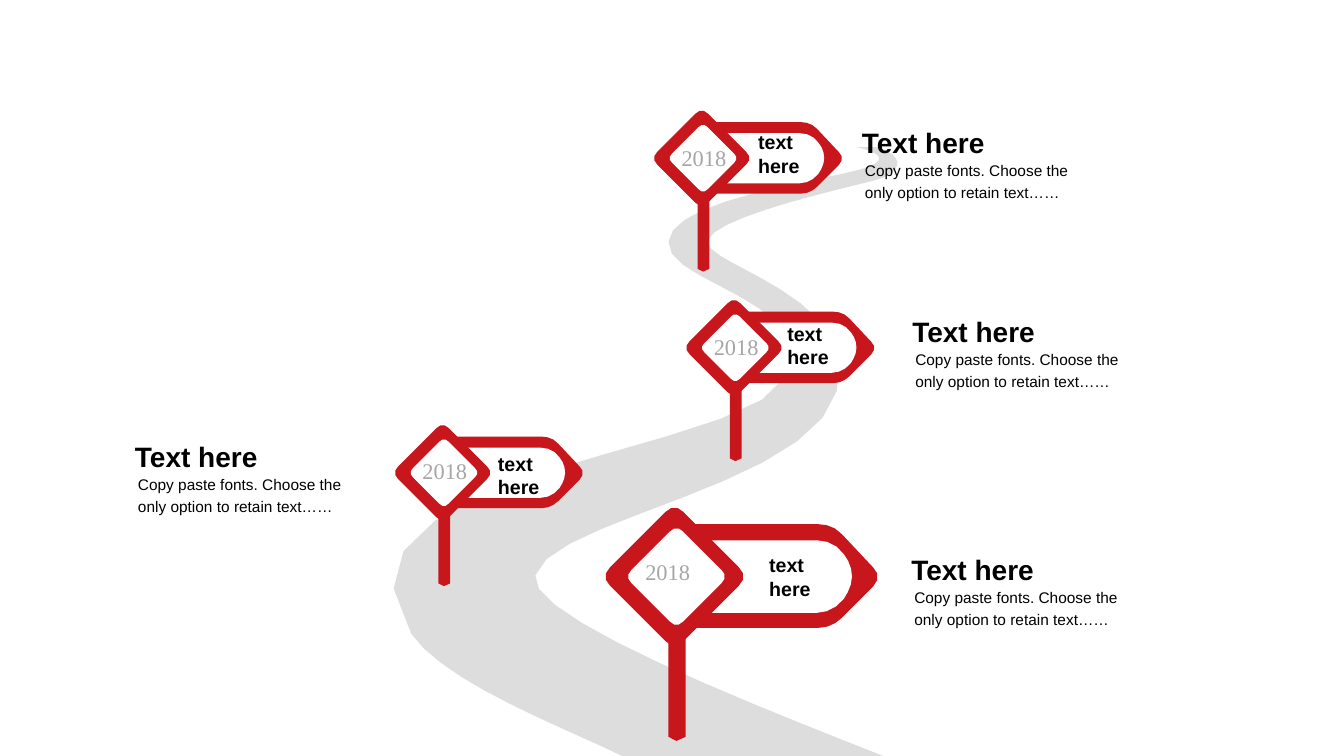
"""Winding road with four dated signposts and their captions."""
from pptx import Presentation
from pptx.dml.color import RGBColor
from pptx.enum.text import MSO_ANCHOR, MSO_AUTO_SIZE
from pptx.util import Inches, Pt

RED = RGBColor(0xC8, 0x16, 0x1D)
WHITE = RGBColor(0xFF, 0xFF, 0xFF)
ROAD_GREY = RGBColor(0xDD, 0xDD, 0xDD)
YEAR_GREY = RGBColor(0xA6, 0xA6, 0xA6)
BLACK = RGBColor(0, 0, 0)
ROAD_STEPS = 10
SIGN_STEPS = 3

ROAD = [
    (8.71, 1.46), (8.49, 1.46), (8.6, 1.48, 8.92, 1.57, 8.54, 1.68),
    (8.11, 1.8, 6.65, 1.99, 6.63, 2.4), (6.6, 2.82, 8.15, 2.97, 7.78, 3.75),
    (7.41, 4.53, 2.97, 4.64, 4.08, 6.29), (4.42, 6.78, 5.6, 7.22, 6.17, 7.5),
    (8.76, 7.5), (7.52, 7.01, 5.2, 6.11, 5.31, 5.71),
    (5.45, 5.15, 8.04, 4.83, 8.3, 3.88), (8.57, 2.92, 6.92, 2.62, 7.02, 2.38),
    (7.13, 2.13, 8.51, 1.84, 8.71, 1.78), (8.89, 1.73, 9.03, 1.57, 8.71, 1.46),
]
ARROW = [
    (1.97, -0.09), (1.66, -0.42), (1.6, -0.49, 1.51, -0.52, 1.42, -0.52),
    (0.02, -0.52), (0.02, 0.51), (1.42, 0.51),
    (1.52, 0.51, 1.6, 0.47, 1.66, 0.41), (1.97, 0.1),
    (2.03, 0.04, 2.03, -0.04, 1.97, -0.09),
]
PLATE = [
    (1.41, -0.36), (0.21, -0.36), (0.21, 0.36), (1.41, 0.36),
    (1.51, 0.36, 1.61, 0.31, 1.68, 0.22), (1.72, 0.16, 1.76, 0.08, 1.76, 0),
    (1.76, -0.08, 1.73, -0.16, 1.68, -0.22),
    (1.62, -0.31, 1.52, -0.36, 1.41, -0.36),
]
POST = [(-0.06, 1.59), (-0.06, 0.55), (0.02, 0.6), (0.11, 0.55),
        (0.11, 1.59), (0.02, 1.63)]
DIAMOND = [
    (0.64, 0.09), (0.09, 0.64), (0.04, 0.7, -0.04, 0.7, -0.09, 0.64),
    (-0.64, 0.09), (-0.7, 0.04, -0.7, -0.04, -0.64, -0.09),
    (-0.09, -0.64), (-0.04, -0.7, 0.04, -0.7, 0.09, -0.64),
    (0.64, -0.09), (0.7, -0.04, 0.7, 0.04, 0.64, 0.09),
]
SIGN_PARTS = [
    (ARROW, RED, 1, 0), (PLATE, WHITE, 1, 0), (POST, RED, 1, 0),
    (DIAMOND, RED, 1, 0), (DIAMOND, WHITE, 0.7, 0.02),
]
SIGNS = [
    ((6.69, 5.72), 1, (6.4, 5.54), (7.53, 5.44), (8.94, 5.37)),
    ((4.39, 4.69), 0.69, (4.19, 4.54), (4.84, 4.43), (1.24, 4.25)),
    ((7.28, 3.45), 0.69, (7.08, 3.31), (7.71, 3.14), (8.95, 3.01)),
    ((6.96, 1.57), 0.69, (6.76, 1.43), (7.42, 1.24), (8.45, 1.13)),
]
YEAR = {"size": Pt(16), "name": "Times New Roman", "bold": False}
LABEL = {"size": Pt(14), "name": "Arial", "bold": True}
HEADING = {"size": Pt(20), "name": "Arial", "bold": True}
BODY = {"size": Pt(11), "name": "Arial", "bold": False}


def add_outline(s, outline, color, steps, x=0, y=0, scale=1):
    points = [outline[0]]
    for part in outline[1:]:
        if len(part) == 2:
            points.append(part)
            continue
        start, c1, c2, end = points[-1], part[:2], part[2:4], part[4:]
        for i in range(1, steps + 1):
            t = i / steps
            u = 1 - t
            points.append(tuple(
                u**3 * a + 3 * u * u * t * b + 3 * u * t * t * c + t**3 * d
                for a, b, c, d in zip(start, c1, c2, end)))
    points = [(Inches(x + scale * px), Inches(y + scale * py)) for px, py in points]
    builder = s.shapes.build_freeform(*points[0])
    builder.add_line_segments(points[1:], close=True)
    sp = builder.convert_to_shape()
    sp.shadow.inherit = False
    sp.fill.solid()
    sp.fill.fore_color.rgb = color
    sp.line.fill.background()


def add_text(s, lines, box, font, color=BLACK, wrap=True):
    tf = s.shapes.add_textbox(*map(Inches, box)).text_frame
    tf.word_wrap = wrap
    if wrap:
        tf.vertical_anchor = MSO_ANCHOR.MIDDLE
    else:
        tf.auto_size = MSO_AUTO_SIZE.SHAPE_TO_FIT_TEXT
    for i, line in enumerate(lines):
        p = tf.add_paragraph() if i else tf.paragraphs[0]
        r = p.add_run()
        r.text = line
        r.font.color.rgb = color
        for name, value in font.items():
            setattr(r.font, name, value)
    return tf


prs = Presentation()
prs.slide_width, prs.slide_height = Inches(13.33), Inches(7.5)
s = prs.slides.add_slide(prs.slide_layouts[6])

add_outline(s, ROAD, ROAD_GREY, ROAD_STEPS)

for (cx, cy), scale, year, label, (left, top) in SIGNS:
    for outline, color, size, shift in SIGN_PARTS:
        add_outline(s, outline, color, SIGN_STEPS, cx + shift * scale, cy, scale * size)

    tf = add_text(s, ["2018"], (*year, 0.45, 0.27), YEAR, YEAR_GREY, wrap=False)
    for side in ("left", "top", "right", "bottom"):
        setattr(tf, f"margin_{side}", 0)

    add_text(s, ["text", "here"], (*label, 0.62, 0.57), LABEL, wrap=False)
    tf = add_text(s, ["Copy paste fonts. Choose the only option to retain text……"],
                  (left + 0.03, top + 0.32, 2.54, 0.66), BODY)
    tf.paragraphs[0].line_spacing = 1.2
    add_text(s, ["Text here"], (left, top, 2.54, 0.56), HEADING)

prs.save("out.pptx")
